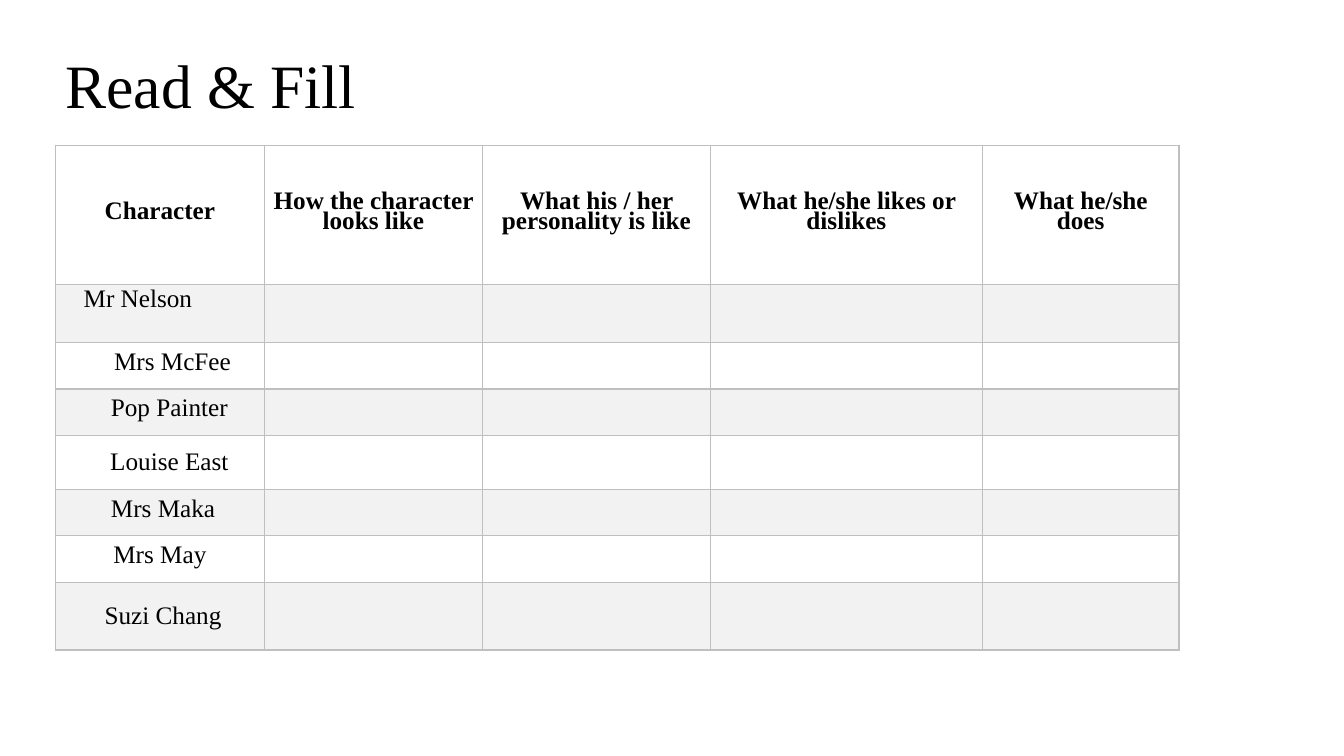
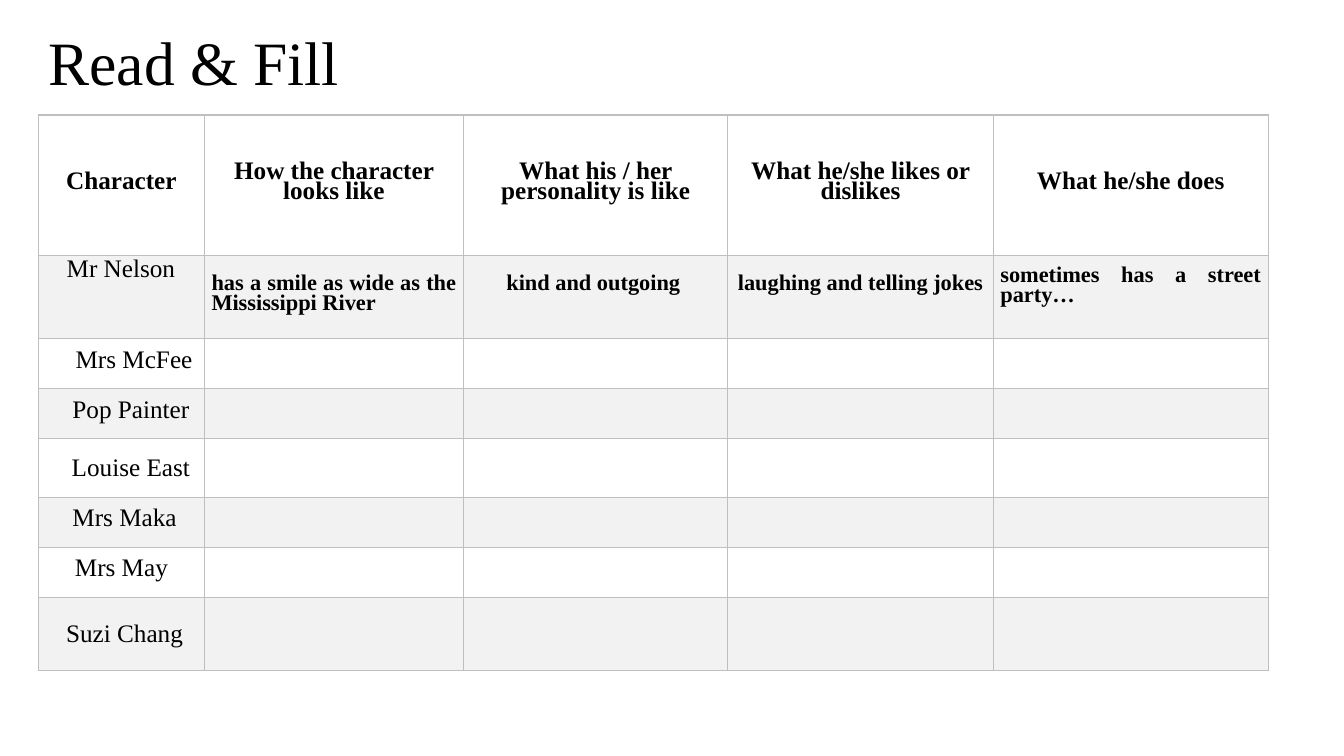
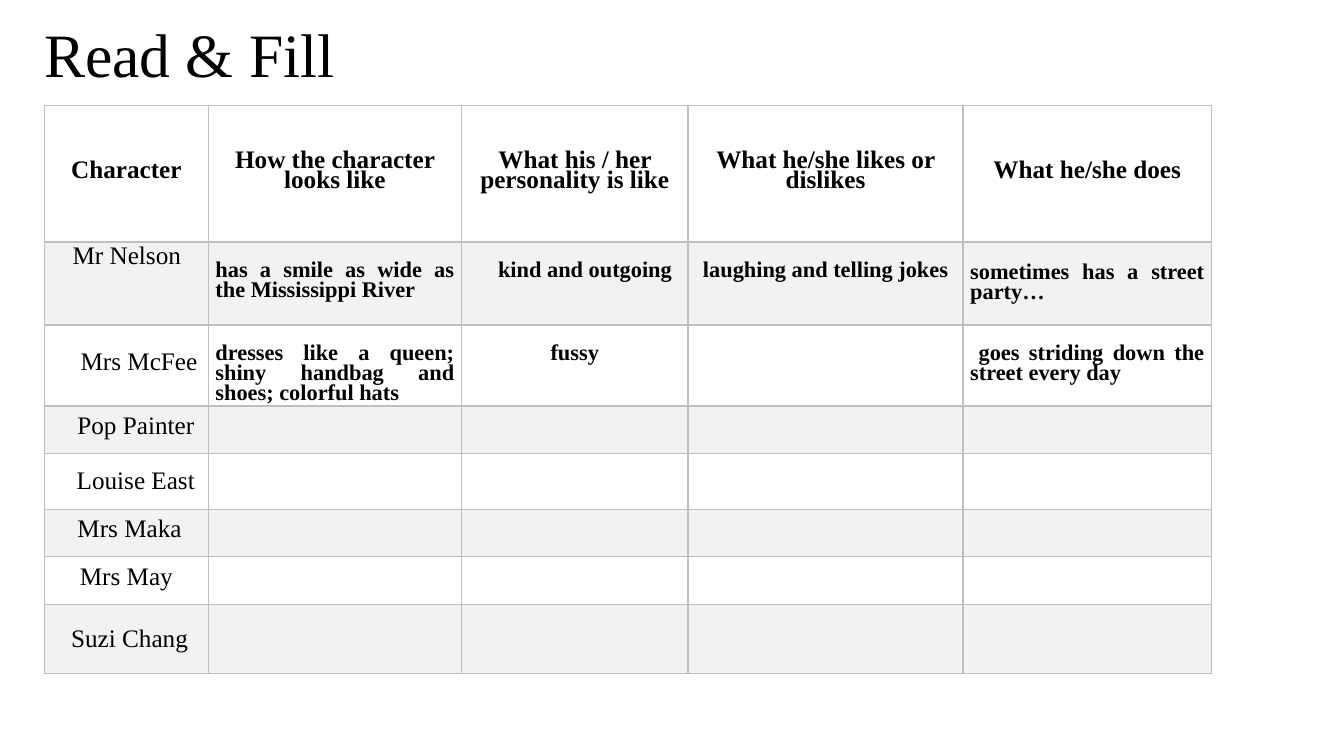
import dataclasses

import pptx
import pptx.dml.color
import pptx.enum.text
import pptx.oxml
import pptx.oxml.ns
import pptx.util

Cm = pptx.util.Cm
Pt = pptx.util.Pt
Align = pptx.enum.text.PP_ALIGN
Anchor = pptx.enum.text.MSO_ANCHOR

# Shared look
BLACK = pptx.dml.color.RGBColor(0x00, 0x00, 0x00)
WHITE = pptx.dml.color.RGBColor(0xFF, 0xFF, 0xFF)
BAND = pptx.dml.color.RGBColor(0xF2, 0xF2, 0xF2)
GRID = pptx.dml.color.RGBColor(0xBF, 0xBF, 0xBF)
FONT = "Times New Roman"
TIGHT = Pt(14.4)
TITLE = "Read & Fill"


@dataclasses.dataclass
class Entry:
    """Text of one cell; indents and top margin are in points."""
    text: str
    size: float = 16
    bold: bool = True
    align: Align = Align.CENTER
    anchor: Anchor = Anchor.TOP
    spacing: object = TIGHT
    indent: float = 0
    first_line: float = 0
    top: float = 14.4


def heading(text):
    return Entry(text, size=18, anchor=Anchor.MIDDLE, top=0)


def character(text, indent=0, **changes):
    return dataclasses.replace(heading(text), bold=False, indent=indent, **changes)


def answer(text, **changes):
    return Entry(text, **{"align": Align.JUSTIFY, **changes})


HEADINGS = [heading(text) for text in (
    "Character", "How the character looks like", "What his / her personality is like",
    "What he/she likes or dislikes", "What he/she does")]
CHARACTERS = [
    character("Mr Nelson", 15, align=Align.LEFT, anchor=Anchor.TOP, spacing=1.0),
    character("Mrs McFee", 18),
    character("Pop Painter", 13.5),
    character("Louise East", 13.5, spacing=1.0),
    character("Mrs Maka", 4.5),
    character("Mrs May"),
    character("Suzi Chang", 4.5, spacing=1.0),
]

# Answers known for Mr Nelson and Mrs McFee, by (row, column)
SMILE = answer("has a smile as wide as the Mississippi River")
JOKES = Entry("laughing and telling jokes")
NATURE = "kind and outgoing"
PARTY = "sometimes has a street party…"
NELSON = {
    (1, 1): SMILE,
    (1, 2): Entry(NATURE, align=Align.LEFT, indent=25.5),
    (1, 3): JOKES,
    (1, 4): answer(PARTY, top=8.7),
}
NELSON_AND_MCFEE = {
    (1, 1): SMILE,
    (1, 2): Entry(NATURE, indent=14.5),
    (1, 3): JOKES,
    (1, 4): answer(PARTY, top=15.8),
    (2, 1): answer("dresses like a queen; shiny handbag and shoes; colorful hats"),
    (2, 2): Entry("fussy"),
    (2, 4): answer("goes striding down the street every day", first_line=6),
}

# Boxes, column widths and row heights in centimetres
SLIDES = [
    dict(title_box=(1.4, 0.38, 29.21, 3.68), corner=(1.4, 3.66),
         columns=(5.26, 5.5, 5.74, 6.86, 4.95),
         rows=(3.51, 1.46, 1.17, 1.17, 1.36, 1.17, 1.17, 1.71), answers={}),
    dict(title_box=(0.97, 0.43, 29.21, 2.46), corner=(0.97, 2.9),
         columns=(4.18, 6.53, 6.66, 6.69, 6.93),
         rows=(3.53, 2.1, 1.26, 1.26, 1.48, 1.26, 1.26, 1.85), answers=NELSON),
    dict(title_box=(0.86, 0.23, 29.21, 2.44), corner=(1.12, 2.65),
         columns=(4.13, 6.38, 5.71, 6.93, 6.26),
         rows=(3.45, 2.09, 2.04, 1.2, 1.4, 1.2, 1.2, 1.75), answers=NELSON_AND_MCFEE),
]


def format_paragraph(paragraph, size, bold, spacing):
    paragraph.line_spacing = spacing
    for run in paragraph.runs:
        run.font.name = FONT
        run.font.size = Pt(size)
        run.font.bold = bold
        run.font.color.rgb = BLACK


def add_title(slide, box):
    frame = slide.shapes.add_textbox(*map(Cm, box)).text_frame
    frame.word_wrap = True
    frame.vertical_anchor = Anchor.MIDDLE
    frame.text = TITLE
    format_paragraph(frame.paragraphs[0], 44, False, 0.9)


def draw_borders(cell):
    properties = cell._tc.get_or_add_tcPr()
    for side in ("lnL", "lnR", "lnT", "lnB"):
        properties.append(pptx.oxml.parse_xml(
            f'<a:{side} {pptx.oxml.ns.nsdecls("a")} w="12700"><a:solidFill>'
            f'<a:srgbClr val="{GRID}"/></a:solidFill></a:{side}>'))


def fill_cell(cell, entry):
    cell.text_frame.text = entry.text
    cell.vertical_anchor = entry.anchor
    cell.margin_top = Pt(entry.top)
    paragraph = cell.text_frame.paragraphs[0]
    paragraph.alignment = entry.align
    format_paragraph(paragraph, entry.size, entry.bold, entry.spacing)
    properties = paragraph._p.get_or_add_pPr()
    properties.set("marL", str(Pt(entry.indent)))
    properties.set("indent", str(Pt(entry.first_line)))


def add_character_table(slide, corner, columns, rows, answers):
    table = slide.shapes.add_table(
        len(rows), len(columns), *map(Cm, corner), Cm(sum(columns)), Cm(sum(rows))).table
    table.first_row = table.horz_banding = False
    for column, width in zip(table.columns, columns):
        column.width = Cm(width)
    for row, height in zip(table.rows, rows):
        row.height = Cm(height)

    entries = {(0, c): entry for c, entry in enumerate(HEADINGS)}
    entries |= {(r, 0): entry for r, entry in enumerate(CHARACTERS, 1)}
    entries |= answers
    for r in range(len(rows)):
        for c in range(len(columns)):
            cell = table.cell(r, c)
            cell.margin_left = cell.margin_right = Cm(0.18)
            cell.margin_top = cell.margin_bottom = 0
            draw_borders(cell)
            cell.fill.solid()
            cell.fill.fore_color.rgb = BAND if r % 2 else WHITE
            if (r, c) in entries:
                fill_cell(cell, entries[r, c])


def add_reading_slide(deck, title_box, **table_parts):
    slide = deck.slides.add_slide(deck.slide_layouts[6])
    add_title(slide, title_box)
    add_character_table(slide, **table_parts)


def main():
    deck = pptx.Presentation()
    deck.slide_width, deck.slide_height = Cm(33.87), Cm(19.05)
    for parts in SLIDES:
        add_reading_slide(deck, **parts)
    deck.save("out.pptx")


if __name__ == "__main__":
    main()
